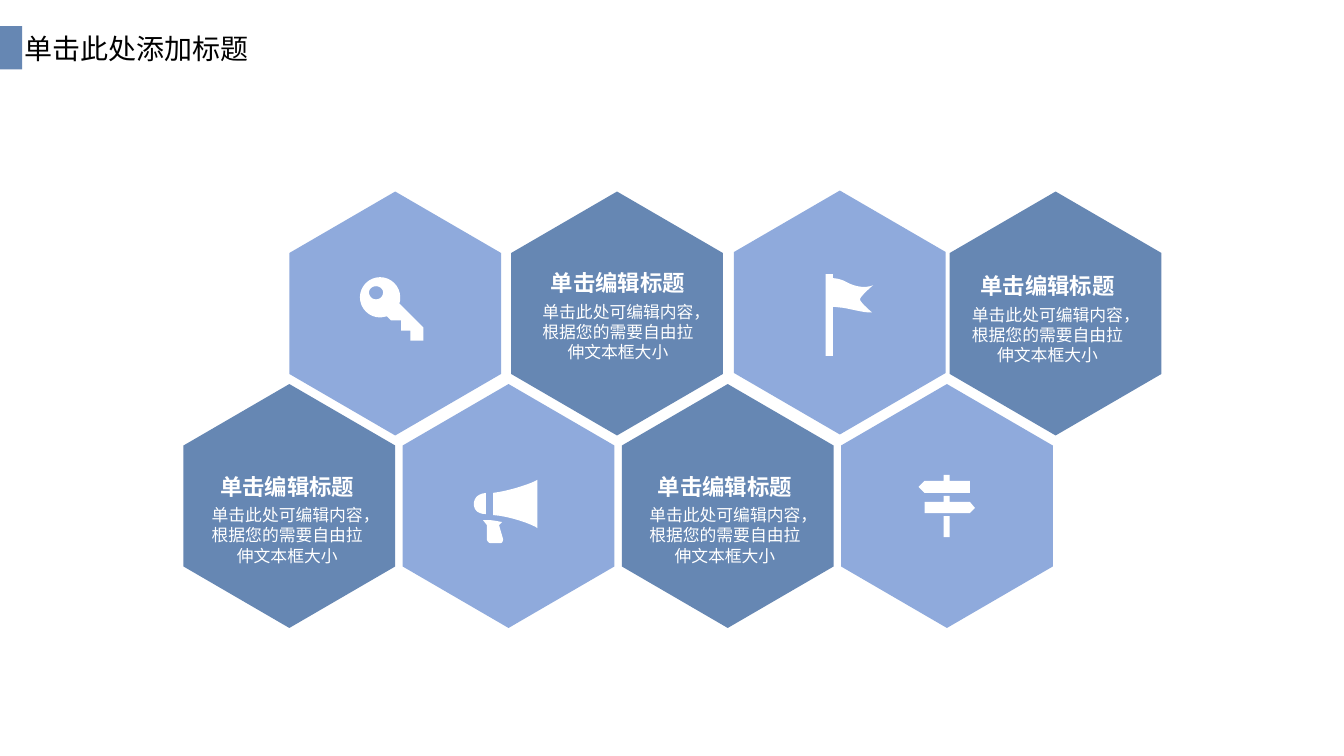
from dataclasses import dataclass

from lxml.etree import SubElement
from pptx import Presentation
from pptx.dml.color import RGBColor
from pptx.enum.lang import MSO_LANGUAGE_ID
from pptx.enum.shapes import MSO_SHAPE
from pptx.enum.text import MSO_ANCHOR, MSO_AUTO_SIZE, PP_ALIGN
from pptx.oxml.ns import qn
from pptx.util import Inches, Pt

Segment = tuple[float, ...]
Contour = list[Segment]


@dataclass(frozen=True)
class Theme:
    dark: str = "6687B3"
    light: str = "8FAADC"
    white: str = "FFFFFF"
    black: str = "000000"
    latin: str = "Arial"
    cjk: str = "Noto Sans CJK SC"
    title: int = 20
    heading: int = 16
    body: int = 12


@dataclass(frozen=True)
class Hexagon:
    cx: float
    top: float
    color: str


@dataclass(frozen=True)
class Caption:
    cx: float
    top: float
    heading: str = "单击编辑标题"
    body: str = "单击此处可编辑内容，根据您的需要自由拉伸文本框大小"


@dataclass(frozen=True)
class Bar:
    x: float
    y: float
    w: float
    h: float
    color: str


T = Theme()
HALF_W, HEX_H, SHOULDER = 1.05, 2.42, 0.61
CURVE_STEPS = 8

HEXAGONS = [
    Hexagon(8.33, 1.89, T.light),
    Hexagon(3.92, 1.9, T.light),
    Hexagon(6.12, 1.9, T.dark),
    Hexagon(10.47, 1.9, T.dark),
    *[Hexagon(2.87 + 2.174 * i, 3.81, (T.dark, T.light)[i % 2]) for i in range(4)],
]
CAPTIONS = [Caption(2.85, 4.69), Caption(6.13, 2.67), Caption(7.19, 4.69), Caption(10.39, 2.7)]

TITLE_MARK = Bar(0, 0.26, 0.22, 0.43, T.dark)
SIGN_POST = Bar(9.36, 5.12, 0.06, 0.21, T.white)
FLAG_POLE = Bar(8.19, 2.72, 0.07, 0.81, T.white)

SIGN_LEFT: Contour = [
    (9.36, 4.77), (9.17, 4.77), (9.11, 4.83), (9.17, 4.89), (9.62, 4.89),
    (9.62, 4.77), (9.42, 4.77), (9.42, 4.71), (9.36, 4.71),
]
SIGN_RIGHT: Contour = [
    (9.36, 4.98), (9.17, 4.98), (9.17, 5.09), (9.62, 5.09), (9.67, 5.04),
    (9.62, 4.98), (9.42, 4.98), (9.42, 4.92), (9.36, 4.92),
]
FLAG: Contour = [
    (8.53, 2.97), (8.53, 2.94, 8.66, 2.83, 8.66, 2.83),
    (8.59, 2.86, 8.49, 2.85, 8.4, 2.8), (8.31, 2.75, 8.23, 2.76, 8.23, 2.76),
    (8.23, 3.05), (8.24, 3.05, 8.26, 3.04, 8.32, 3.05),
    (8.39, 3.05, 8.58, 3.11, 8.65, 3.1), (8.65, 3.1, 8.53, 3, 8.53, 2.97),
]
KEY_BODY: Contour = [
    (3.96, 3.01), (3.97, 2.99, 3.97, 2.97, 3.97, 2.95),
    (3.97, 2.84, 3.88, 2.75, 3.77, 2.75), (3.66, 2.75, 3.57, 2.84, 3.57, 2.95),
    (3.57, 3.06, 3.66, 3.15, 3.77, 3.15), (3.79, 3.15, 3.82, 3.14, 3.84, 3.14),
    (3.88, 3.18), (3.98, 3.18), (3.98, 3.28), (4.07, 3.28), (4.07, 3.38),
    (4.2, 3.38), (4.2, 3.25),
]
KEY_HOLE: Contour = [
    (3.73, 2.97), (3.69, 2.97, 3.66, 2.94, 3.66, 2.9),
    (3.66, 2.87, 3.69, 2.84, 3.73, 2.84), (3.77, 2.84, 3.8, 2.87, 3.8, 2.9),
    (3.8, 2.94, 3.77, 2.97, 3.73, 2.97),
]
HORN_HANDLE: Contour = [
    (4.79, 5.16), (4.83, 5.21), (4.83, 5.35), (4.83, 5.37, 4.85, 5.39, 4.87, 5.39),
    (4.96, 5.39), (4.98, 5.39, 4.99, 5.37, 4.99, 5.35), (4.95, 5.21), (4.98, 5.18),
    (4.93, 5.17, 4.88, 5.16, 4.84, 5.16),
]
HORN_BELL: Contour = [
    (4.89, 5.11), (5.06, 5.12, 5.3, 5.21, 5.33, 5.24), (5.33, 4.76),
    (5.29, 4.79, 5.06, 4.87, 4.89, 4.89),
]
HORN_BACK: Contour = [
    (4.82, 5.1), (4.82, 4.89), (4.72, 4.9, 4.7, 4.96, 4.7, 5),
    (4.7, 5.04, 4.72, 5.1, 4.82, 5.1),
]
ICONS = [[SIGN_LEFT], [SIGN_RIGHT], [FLAG], [KEY_BODY, KEY_HOLE],
         [HORN_HANDLE], [HORN_BELL], [HORN_BACK]]


def paint(sp, color: str) -> None:
    sp.shadow.inherit = False
    sp.fill.solid()
    sp.fill.fore_color.rgb = RGBColor.from_string(color)
    sp.line.fill.background()


def flatten(contour: Contour) -> list[tuple[int, int]]:
    points = [contour[0]]
    for seg in contour[1:]:
        if len(seg) == 2:
            points.append(seg)
            continue
        ctrl = (points[-1], seg[:2], seg[2:4], seg[4:])
        for i in range(1, CURVE_STEPS + 1):
            t = i / CURVE_STEPS
            weights = ((1 - t) ** 3, 3 * t * (1 - t) ** 2, 3 * t * t * (1 - t), t ** 3)
            points.append(tuple(sum(w * c[k] for w, c in zip(weights, ctrl)) for k in (0, 1)))
    return [(Inches(x), Inches(y)) for x, y in points]


def add_outline(s, contours: list[Contour], color: str) -> None:
    first, *others = [flatten(c) for c in contours]
    builder = s.shapes.build_freeform(*first[0])
    builder.add_line_segments(first[1:], close=True)
    for points in others:
        builder.move_to(*points[0])
        builder.add_line_segments(points[1:], close=True)
    paint(builder.convert_to_shape(), color)


def add_hexagon(s, h: Hexagon) -> None:
    left, right, bottom = h.cx - HALF_W, h.cx + HALF_W, h.top + HEX_H
    upper, lower = h.top + SHOULDER, bottom - SHOULDER
    add_outline(s, [[(h.cx, h.top), (right, upper), (right, lower),
                     (h.cx, bottom), (left, lower), (left, upper)]], h.color)


def add_bar(s, b: Bar) -> None:
    box = map(Inches, (b.x, b.y, b.w, b.h))
    paint(s.shapes.add_shape(MSO_SHAPE.RECTANGLE, *box), b.color)


def add_text(s, text: str, *, x: float, y: float, w: float, h: float, size: int,
             color: str = T.white, font: str = T.latin, bold: bool = False,
             align: PP_ALIGN = PP_ALIGN.CENTER, inset: tuple[float, float] = (0, 0)) -> None:
    tf = s.shapes.add_textbox(*map(Inches, (x, y, w, h))).text_frame
    tf.word_wrap = True
    tf.auto_size = MSO_AUTO_SIZE.SHAPE_TO_FIT_TEXT
    tf.vertical_anchor = MSO_ANCHOR.TOP
    tf.margin_left = tf.margin_right = Inches(inset[0])
    tf.margin_top = tf.margin_bottom = Inches(inset[1])
    p = tf.paragraphs[0]
    p.alignment = align
    r = p.add_run()
    r.text = text
    r.font.size, r.font.bold, r.font.name = Pt(size), bold, font
    r.font.color.rgb = RGBColor.from_string(color)
    r.font.language_id = MSO_LANGUAGE_ID.SIMPLIFIED_CHINESE
    SubElement(r.font._element, qn("a:ea")).set("typeface", T.cjk)


def add_caption(s, c: Caption) -> None:
    add_text(s, c.heading, x=c.cx - 1.28, y=c.top, w=2.56, h=0.27, size=T.heading, bold=True)
    add_text(s, c.body, x=c.cx - 0.77, y=c.top + 0.32, w=1.54, h=0.61, size=T.body)


def main() -> None:
    prs = Presentation()
    prs.slide_width, prs.slide_height = Inches(13.33), Inches(7.5)
    s = prs.slides.add_slide(prs.slide_layouts[6])
    add_bar(s, TITLE_MARK)
    add_text(s, "单击此处添加标题", x=0.14, y=0.26, w=2.56, h=0.44, size=T.title,
             color=T.black, font=T.cjk, align=PP_ALIGN.LEFT, inset=(0.1, 0.05))
    for h in HEXAGONS:
        add_hexagon(s, h)
    for bar in (SIGN_POST, FLAG_POLE):
        add_bar(s, bar)
    for contours in ICONS:
        add_outline(s, contours, T.white)
    for c in CAPTIONS:
        add_caption(s, c)
    prs.save("out.pptx")


if __name__ == "__main__":
    main()
